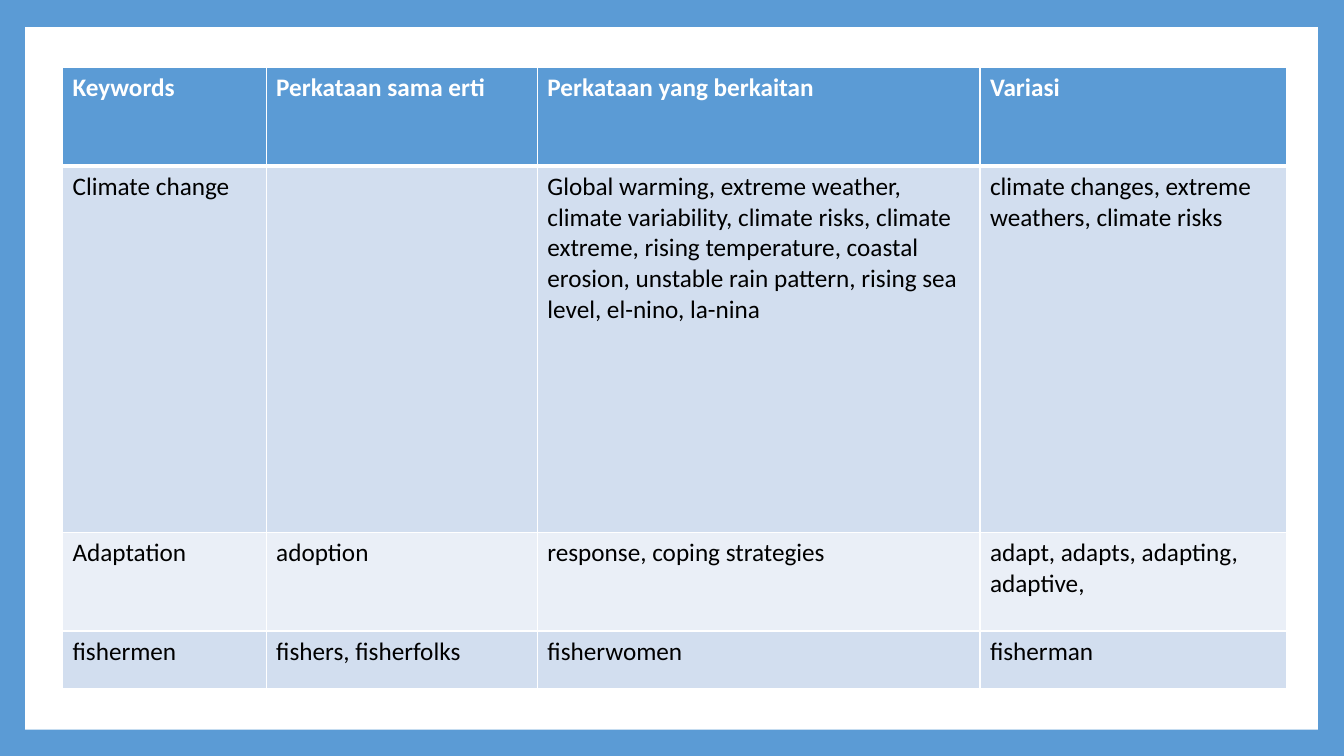
from dataclasses import dataclass

from lxml import etree
from pptx import Presentation
from pptx.dml.color import RGBColor
from pptx.enum.shapes import MSO_SHAPE
from pptx.oxml.ns import qn
from pptx.util import Emu, Pt

RECTANGLE = MSO_SHAPE.RECTANGLE
EMU_PER_PX = 9144  # 100 px to the inch
FONT = "Calibri"
BLUE, WHITE, BLACK = "5B9BD5", "FFFFFF", "000000"
BAND_DARK, BAND_LIGHT = "D2DEEF", "EAEFF7"
THIN, THICK = 1, 3  # border widths in points


@dataclass
class KeywordRow:
    height: int
    fill: str
    texts: tuple[str, str, str, str]
    color: str = BLACK
    bold: bool = False
    top: int = THIN
    bottom: int = THIN


COLUMN_WIDTHS = (202, 269, 439, 304)
ROWS = (
    KeywordRow(98, BLUE,
               ("Keywords", "Perkataan sama erti", "Perkataan yang berkaitan", "Variasi"),
               color=WHITE, bold=True, bottom=THICK),
    KeywordRow(363, BAND_DARK,
               ("Climate change", "",
                "Global warming, extreme weather, climate variability, climate risks, "
                "climate extreme, rising temperature, coastal erosion, unstable rain "
                "pattern, rising sea level, el-nino, la-nina",
                "climate changes, extreme weathers, climate risks"),
               top=THICK),
    KeywordRow(98, BAND_LIGHT,
               ("Adaptation", "adoption", "response, coping strategies",
                "adapt, adapts, adapting, adaptive,")),
    KeywordRow(57, BAND_DARK,
               ("fishermen", "fishers, fisherfolks", "fisherwomen", "fisherman")),
)


def px(n: int) -> Emu:
    return Emu(n * EMU_PER_PX)


def rgb(value: str) -> RGBColor:
    return RGBColor.from_string(value)


def fill_solid(fill, color: str) -> None:
    fill.solid()
    fill.fore_color.rgb = rgb(color)


def set_borders(cell, top: int, bottom: int) -> None:
    tc_pr = cell._tc.get_or_add_tcPr()
    for side, width in (("L", THIN), ("R", THIN), ("T", top), ("B", bottom)):
        ln = etree.SubElement(tc_pr, qn(f"a:ln{side}"), w=str(Pt(width)))
        solid = etree.SubElement(ln, qn("a:solidFill"))
        etree.SubElement(solid, qn("a:srgbClr"), val=WHITE)


def draw_cell(cell, text: str, row: KeywordRow) -> None:
    set_borders(cell, row.top, row.bottom)
    fill_solid(cell.fill, row.fill)
    cell.text = text
    font = cell.text_frame.paragraphs[0].font
    font.name, font.size, font.bold = FONT, Pt(18), row.bold
    font.color.rgb = rgb(row.color)


def draw_table(slide, left: int, top: int) -> None:
    width, height = sum(COLUMN_WIDTHS), sum(row.height for row in ROWS)
    table = slide.shapes.add_table(len(ROWS), len(COLUMN_WIDTHS),
                                   px(left), px(top), px(width), px(height)).table
    for column, column_width in zip(table.columns, COLUMN_WIDTHS):
        column.width = px(column_width)
    for table_row, row in zip(table.rows, ROWS):
        table_row.height = px(row.height)
        for cell, text in zip(table_row.cells, row.texts):
            draw_cell(cell, text, row)


def main() -> None:
    prs = Presentation()
    prs.slide_width, prs.slide_height = px(1333), px(750)
    slide = prs.slides.add_slide(prs.slide_layouts[6])

    # Blue frame around a white panel
    fill_solid(slide.background.fill, BLUE)
    panel = slide.shapes.add_shape(RECTANGLE, px(25), px(27), px(1282), px(697))
    panel.shadow.inherit = False
    fill_solid(panel.fill, WHITE)
    panel.line.fill.background()

    # Keyword table
    draw_table(slide, 62, 67)
    prs.save("out.pptx")


if __name__ == "__main__":
    main()
